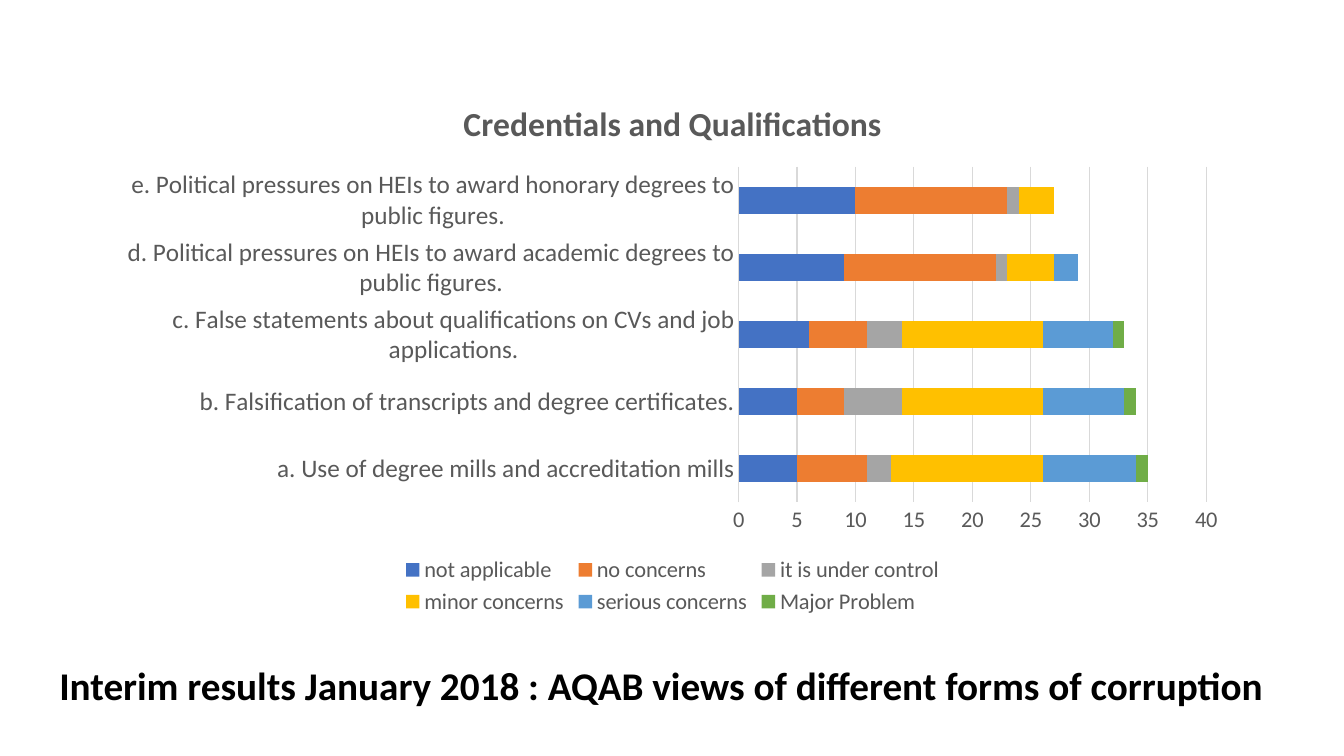
from pptx import Presentation
from pptx.chart.data import CategoryChartData
from pptx.dml.color import RGBColor
from pptx.enum.chart import XL_CHART_TYPE as ChartType, XL_LEGEND_POSITION as LegendPos, XL_TICK_MARK as Tick
from pptx.enum.text import MSO_AUTO_SIZE as AutoSize
from pptx.util import Inches, Pt

FONT = "Calibri"
BLACK = RGBColor(0x00, 0x00, 0x00)
GREY = RGBColor(0x59, 0x59, 0x59)
RULE = RGBColor(0xD9, 0xD9, 0xD9)
BLUE = RGBColor(0x44, 0x72, 0xC4)
ORANGE = RGBColor(0xED, 0x7D, 0x31)
SILVER = RGBColor(0xA5, 0xA5, 0xA5)
GOLD = RGBColor(0xFF, 0xC0, 0x00)
SKY = RGBColor(0x5B, 0x9B, 0xD5)
GREEN = RGBColor(0x70, 0xAD, 0x47)

FORMS = [
    "a. Use of degree mills and accreditation mills",
    "b. Falsification of transcripts and degree certificates.",
    "c. False statements about qualifications on CVs and job applications.",
    "d. Political pressures on HEIs to award academic degrees to public figures.",
    "e. Political pressures on HEIs to award honorary degrees to public figures.",
]
VIEWS = [
    ("not applicable", BLUE, (5, 5, 6, 9, 10)),
    ("no concerns", ORANGE, (6, 4, 5, 13, 13)),
    ("it is under control", SILVER, (2, 5, 3, 1, 1)),
    ("minor concerns", GOLD, (13, 12, 12, 4, 3)),
    ("serious concerns", SKY, (8, 7, 6, 2, 0)),
    ("Major Problem", GREEN, (1, 1, 1, 0, 0)),
]


def format_font(font, size, color=GREY, bold=False):
    font.name = FONT
    font.size = Pt(size)
    font.bold = bold
    font.color.rgb = color


def add_run(tf, text, **fmt):
    r = tf.paragraphs[0].add_run()
    r.text = text
    format_font(r.font, **fmt)


def format_rule(line):
    line.color.rgb = RULE
    line.width = Pt(0.75)


def format_axis(axis, size):
    axis.major_tick_mark = axis.minor_tick_mark = Tick.NONE
    format_font(axis.tick_labels.font, size)


def add_views_chart(s, left, top, width, height):
    data = CategoryChartData()
    data.categories = FORMS
    for name, _, counts in VIEWS:
        data.add_series(name, counts)
    chart = s.shapes.add_chart(ChartType.BAR_STACKED, Inches(left), Inches(top),
                               Inches(width), Inches(height), data).chart
    format_font(chart.font, 10, BLACK)

    chart.has_title = True
    add_run(chart.chart_title.text_frame, "Credentials and Qualifications", size=24, bold=True)
    chart.chart_title.include_in_layout = False

    chart.has_legend = True
    chart.legend.position = LegendPos.BOTTOM
    chart.legend.include_in_layout = False
    format_font(chart.legend.font, 16)

    format_axis(chart.category_axis, 18)
    format_rule(chart.category_axis.format.line)
    counts_axis = chart.value_axis
    format_axis(counts_axis, 16)
    counts_axis.format.line.fill.background()
    counts_axis.has_major_gridlines = True
    format_rule(counts_axis.major_gridlines.format.line)
    counts_axis.minimum_scale, counts_axis.maximum_scale = 0, 40
    counts_axis.major_unit = 5

    plot = chart.plots[0]
    plot.gap_width = 150
    plot.overlap = 100
    plot.vary_by_categories = False
    for series, (_, color, _) in zip(plot.series, VIEWS):
        series.format.fill.solid()
        series.format.fill.fore_color.rgb = color
        series.invert_if_negative = False


def add_caption(s, left, top, width, height):
    tf = s.shapes.add_textbox(Inches(left), Inches(top), Inches(width), Inches(height)).text_frame
    tf.word_wrap = True
    tf.auto_size = AutoSize.SHAPE_TO_FIT_TEXT
    add_run(tf, "Interim results January 2018 : AQAB views of different forms of corruption",
            size=28, color=BLACK, bold=True)


def main():
    prs = Presentation()
    prs.slide_width, prs.slide_height = Inches(13.33), Inches(7.5)
    s = prs.slides.add_slide(prs.slide_layouts[6])
    add_caption(s, 0.49, 6.51, 12.62, 0.57)
    add_views_chart(s, 1.04, 0.78, 11.26, 5.37)
    prs.save("out.pptx")


if __name__ == "__main__":
    main()
